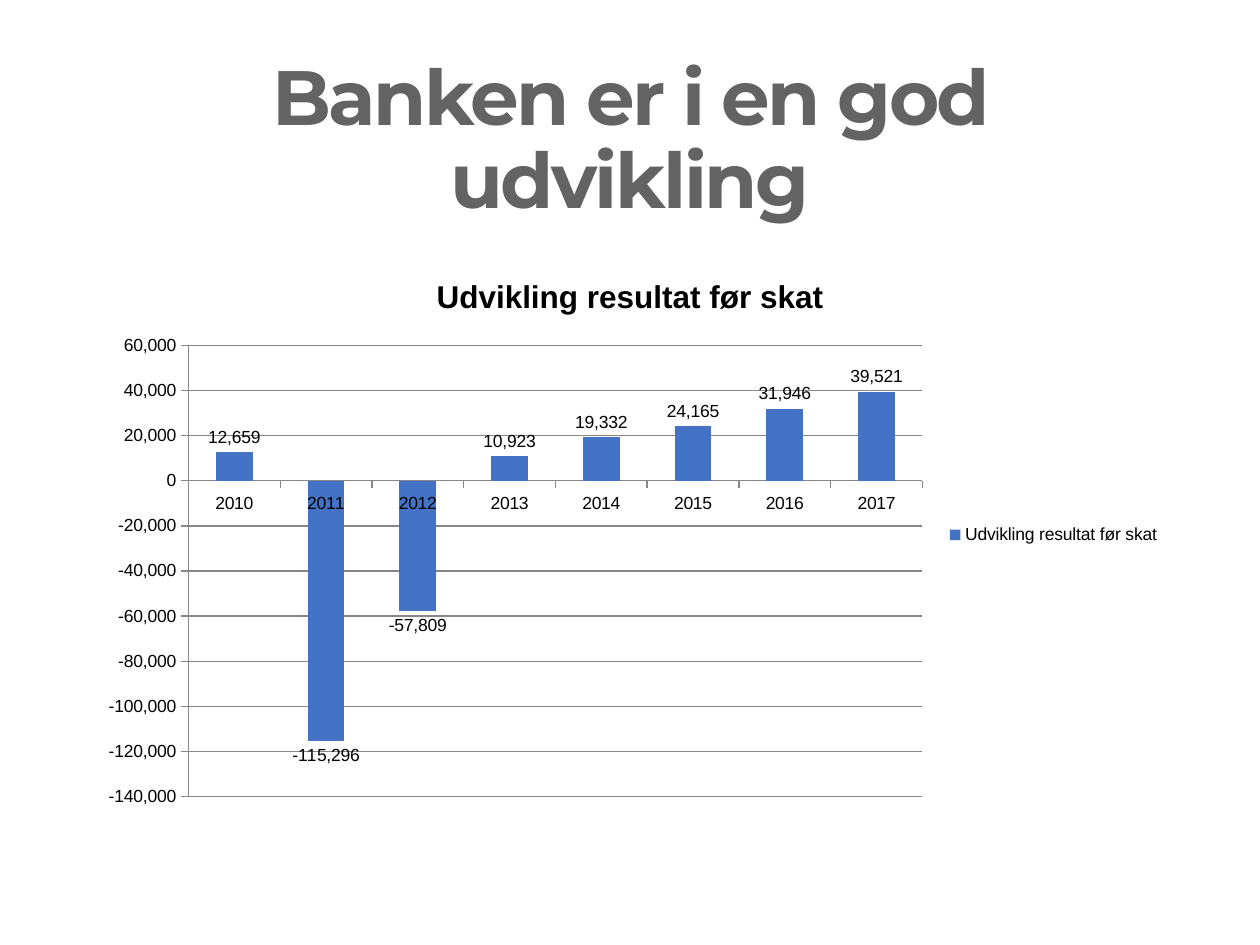
import pptx
import pptx.chart.data
import pptx.dml.color
import pptx.enum.chart
import pptx.enum.text
import pptx.util
from pptx.util import Inches

COLORS = {"title": "636363", "bar": "4472C4", "text": "000000", "line": "878787"}
NAME = "Udvikling resultat før skat"
RESULTS = {
    "2010": 12659, "2011": -115296, "2012": -57809, "2013": 10923,
    "2014": 19332, "2015": 24165, "2016": 31946, "2017": 39521,
}
FORMAT = "#,##0"


def style(font, face: str, size: float, color: str, bold: bool = False) -> None:
    font.name = face
    font.size = pptx.util.Pt(size)
    font.bold = bold
    font.color.rgb = pptx.dml.color.RGBColor.from_string(COLORS[color])


def rule(line) -> None:
    """Make a chart line thin and grey."""
    line.color.rgb = pptx.dml.color.RGBColor.from_string(COLORS["line"])
    line.width = pptx.util.Pt(0.75)


def add_title(slide) -> None:
    title = slide.shapes.title
    title.left, title.top = Inches(0.69), Inches(0.4)
    title.width, title.height = Inches(8.62), Inches(1.45)
    frame = title.text_frame
    frame.text = "Banken er i en god udvikling"
    frame.word_wrap = True
    frame.auto_size = pptx.enum.text.MSO_AUTO_SIZE.NONE
    frame.vertical_anchor = pptx.enum.text.MSO_ANCHOR.MIDDLE
    para = frame.paragraphs[0]
    para.alignment = pptx.enum.text.PP_ALIGN.CENTER
    para.line_spacing = 0.9
    run = para.runs[0]
    style(run.font, "Montserrat", 44, "title", True)
    run._r.get_or_add_rPr().set("spc", "-150")


def add_chart(slide) -> None:
    data = pptx.chart.data.CategoryChartData(number_format=FORMAT)
    data.categories = list(RESULTS)
    data.add_series(NAME, list(RESULTS.values()))
    chart = slide.shapes.add_chart(
        pptx.enum.chart.XL_CHART_TYPE.COLUMN_CLUSTERED,
        Inches(0.69), Inches(2), Inches(8.62), Inches(4.49), data,
    ).chart
    style(chart.font, "Arial", 10, "text")

    frame = chart.chart_title.text_frame
    frame.text = NAME
    style(frame.paragraphs[0].runs[0].font, "Arial", 18, "text", True)
    chart.chart_title.include_in_layout = False

    chart.has_legend = True
    chart.legend.position = pptx.enum.chart.XL_LEGEND_POSITION.RIGHT
    chart.legend.include_in_layout = False

    for axis in (chart.category_axis, chart.value_axis):
        axis.major_tick_mark = pptx.enum.chart.XL_TICK_MARK.OUTSIDE
        rule(axis.format.line)
    values = chart.value_axis
    values.minimum_scale, values.maximum_scale = -140000, 60000
    values.major_unit = 20000
    values.tick_labels.number_format = FORMAT
    values.tick_labels.number_format_is_linked = False
    values.has_major_gridlines = True
    rule(values.major_gridlines.format.line)

    plot = chart.plots[0]
    plot.gap_width = 150
    plot.vary_by_categories = False
    bars = plot.series[0]
    bars.invert_if_negative = False
    bars.format.fill.solid()
    bars.format.fill.fore_color.rgb = pptx.dml.color.RGBColor.from_string(COLORS["bar"])
    labels = bars.data_labels
    labels.show_value = True
    labels.number_format = FORMAT
    labels.number_format_is_linked = False
    labels.position = pptx.enum.chart.XL_LABEL_POSITION.OUTSIDE_END
    style(labels.font, "Arial", 10, "text")


def main() -> None:
    deck = pptx.Presentation()
    deck.slide_width, deck.slide_height = Inches(10), Inches(7.5)
    slide = deck.slides.add_slide(deck.slide_layouts.get_by_name("Title Only"))
    add_title(slide)
    add_chart(slide)
    deck.save("out.pptx")


if __name__ == "__main__":
    main()
